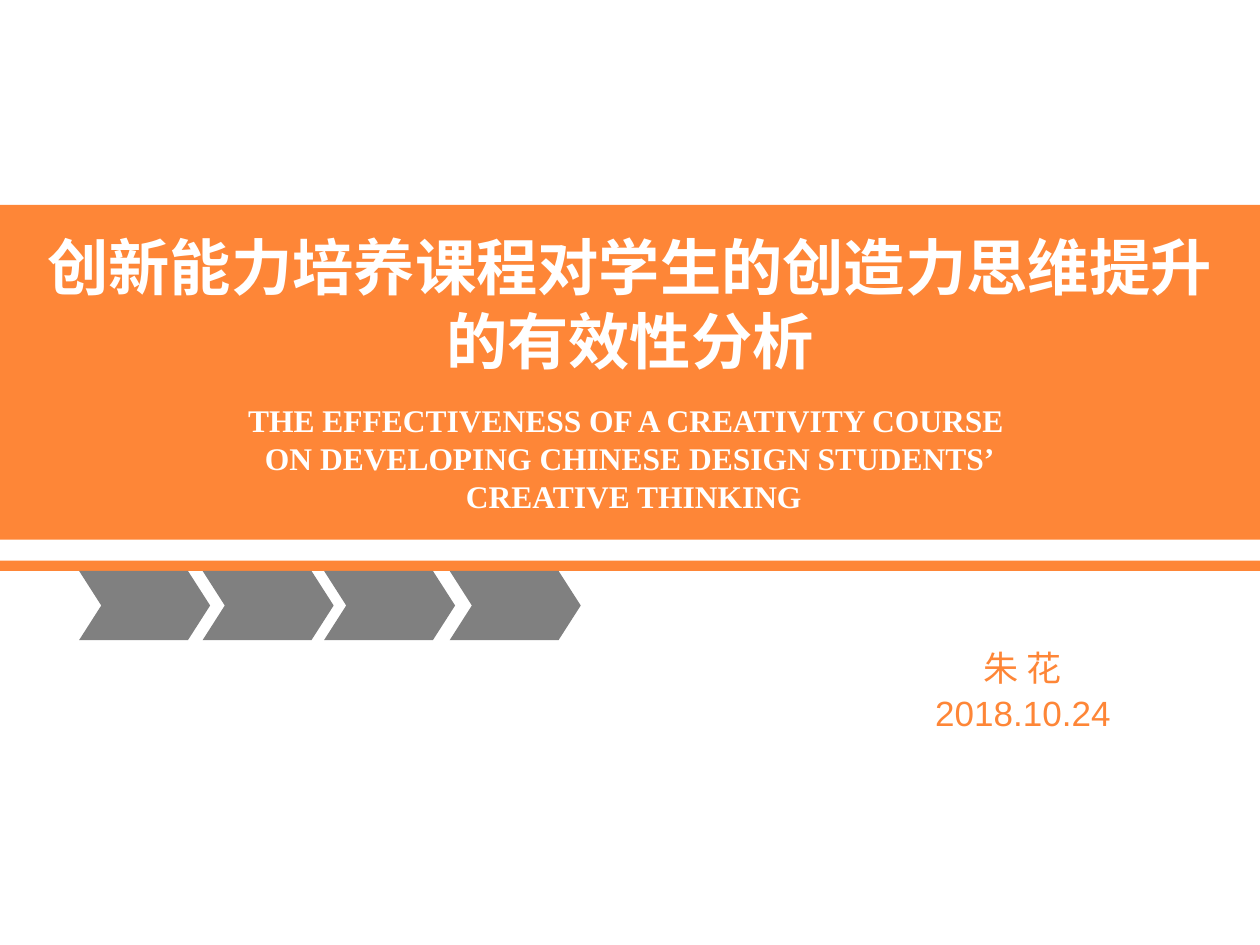
"""Build the title slide of a talk on a creativity course."""
import pptx
import pptx.util
import pptx.dml.color
import pptx.enum.shapes
import pptx.enum.text

Pt = pptx.util.Pt
RGB = pptx.dml.color.RGBColor
KIND = pptx.enum.shapes.MSO_SHAPE
ANCHOR = pptx.enum.text.MSO_ANCHOR
ALIGN = pptx.enum.text.PP_ALIGN

ORANGE = RGB(0xFE, 0x86, 0x37)
GREY = RGB(0x80, 0x80, 0x80)
WHITE = RGB(0xFF, 0xFF, 0xFF)

TITLE = ["创新能力培养课程对学生的创造力思维提升", "的有效性分析"]
ENGLISH = [
    "THE EFFECTIVENESS OF A CREATIVITY COURSE ",
    "ON DEVELOPING CHINESE DESIGN STUDENTS’",
    " CREATIVE THINKING",
]
AUTHOR = ["朱 花", "2018.10.24"]
LEFTS = (45.2, 115.8, 185.2, 257)


def add_block(shapes, kind, box, color):
    block = shapes.add_shape(kind, *map(Pt, box))
    block.shadow.inherit = False
    block.fill.solid()
    block.fill.fore_color.rgb = color
    block.line.fill.background()
    return block


def add_lines(frame, lines, face, size, color, bold=False, gap=0):
    for line in lines:
        para = frame.paragraphs[0]
        if para.runs:
            para = frame.add_paragraph()
            para.space_before = Pt(gap)
        para.text = line
        para.alignment = ALIGN.CENTER
        para.font.name = face
        para.font.size = Pt(size)
        para.font.bold = bold
        para.font.color.rgb = color


def add_title(shapes):
    band = add_block(shapes, KIND.RECTANGLE, (0, 117, 720, 191.3), ORANGE)
    frame = band.text_frame
    frame.word_wrap = True
    frame.vertical_anchor = ANCHOR.MIDDLE
    add_lines(frame, TITLE, "Times New Roman", 35, WHITE, True)
    add_lines(frame, ENGLISH, "Times New Roman", 18, WHITE, True)
    frame.paragraphs[len(TITLE)].space_before = Pt(14)


def add_author(shapes):
    frame = shapes.add_textbox(*map(Pt, (332.6, 365.8, 504, 105.8))).text_frame
    frame.word_wrap = True
    add_lines(frame, AUTHOR, "Arial", 20, ORANGE, gap=2)


def add_arrows(shapes):
    group = shapes.add_group_shape()
    for left in LEFTS:
        arrow = add_block(group.shapes, KIND.CHEVRON, (left, 326.2, 74.9, 39.6), GREY)
        arrow.adjustments[0] = 0.32


def main():
    deck = pptx.Presentation()
    deck.slide_width, deck.slide_height = Pt(720), Pt(540)
    slide = deck.slides.add_slide(deck.slide_layouts[6])
    slide.background.fill.solid()
    slide.background.fill.fore_color.rgb = WHITE
    add_block(slide.shapes, KIND.RECTANGLE, (0, 320.4, 720, 5.8), ORANGE)
    add_title(slide.shapes)
    add_author(slide.shapes)
    add_arrows(slide.shapes)
    deck.save("out.pptx")


if __name__ == "__main__":
    main()
